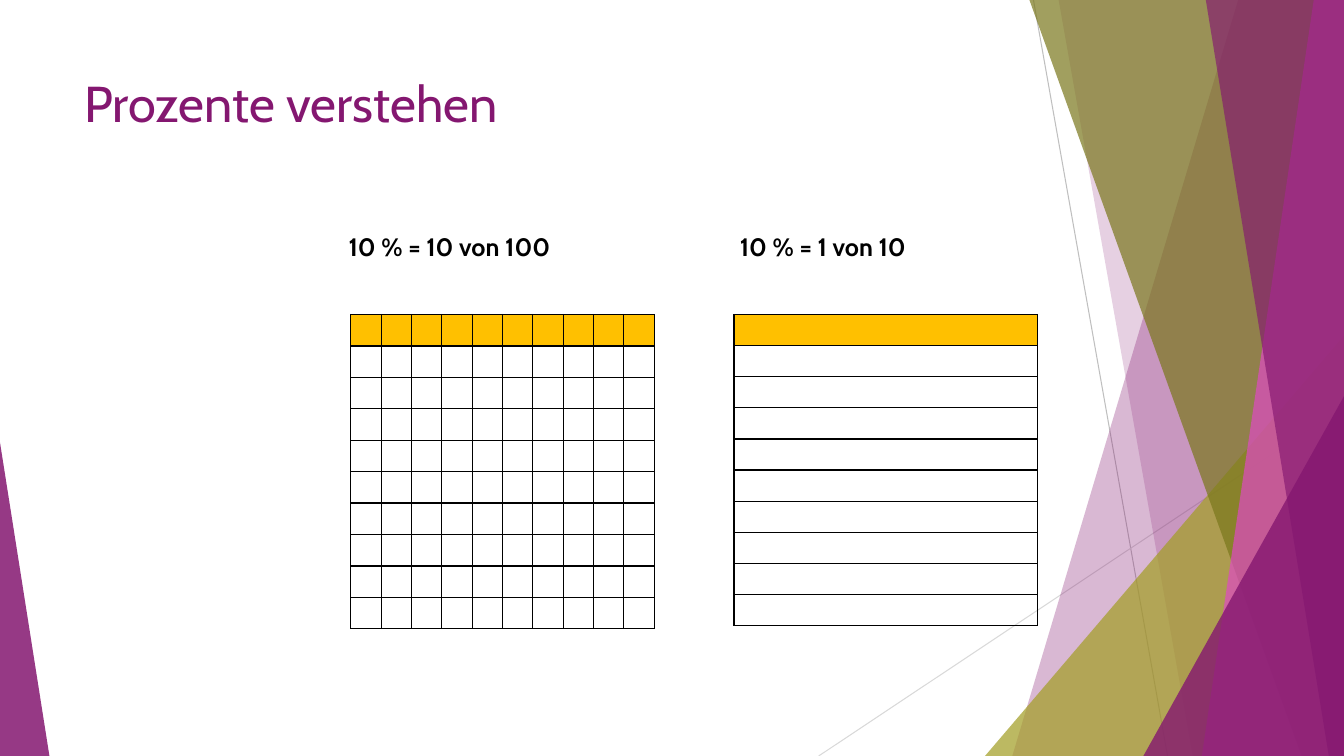
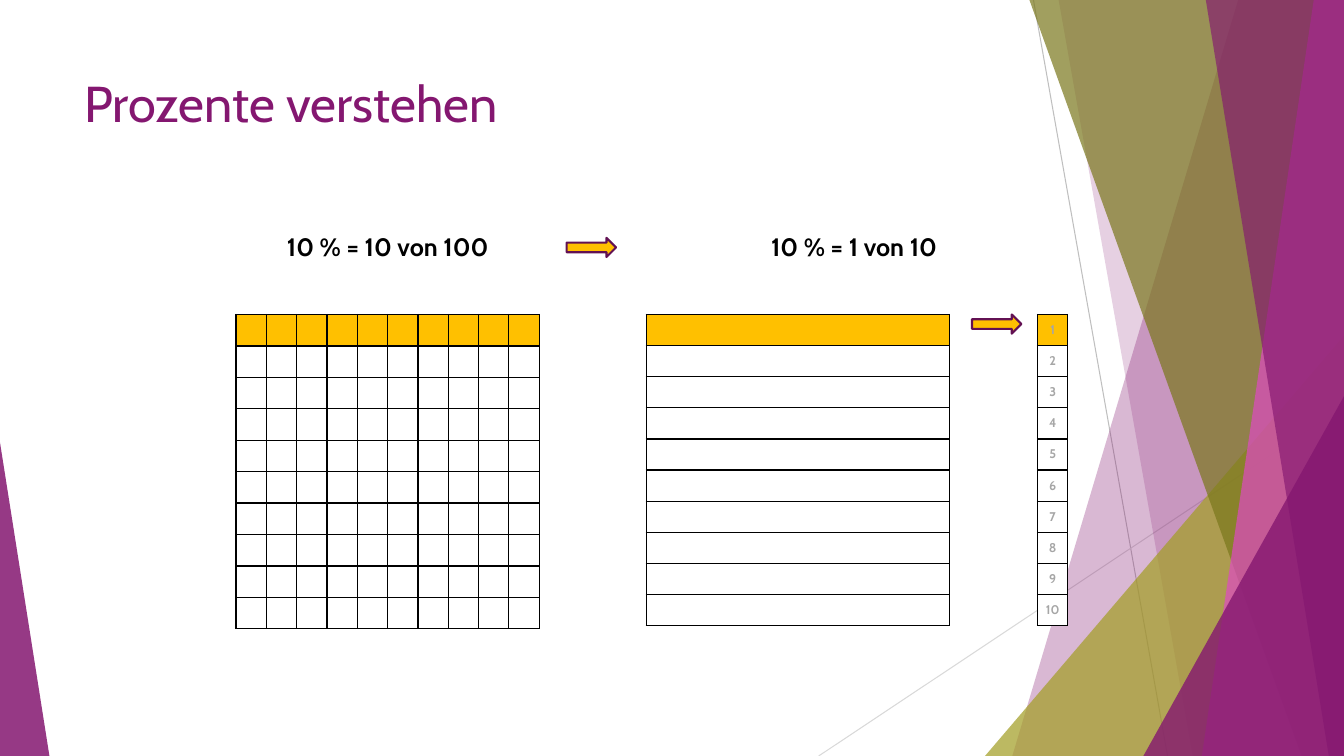
from lxml import etree
from pptx import Presentation
from pptx.dml.color import RGBColor
from pptx.enum.shapes import MSO_CONNECTOR, MSO_SHAPE
from pptx.enum.text import MSO_ANCHOR, PP_ALIGN
from pptx.oxml.ns import qn
from pptx.util import Inches, Pt

LEFT, CENTER = PP_ALIGN.LEFT, PP_ALIGN.CENTER
MIDDLE = MSO_ANCHOR.MIDDLE
STRAIGHT = MSO_CONNECTOR.STRAIGHT
TRIANGLE, RIGHT_ARROW = MSO_SHAPE.ISOSCELES_TRIANGLE, MSO_SHAPE.RIGHT_ARROW

FONT = "Cabin"
PURPLE, DARK_PURPLE, PINK = "841770", "621153", "DF4AC4"
OLIVE, DARK_OLIVE = "A39E26", "7A771C"
ORANGE, BLACK, WHITE, GREY = "FFC000", "000000", "FFFFFF", "A6A6A6"

SLIDE_W, SLIDE_H = 13.33, 7.5
TITLE = "Prozente verstehen"
TITLE_BOX = (0.74, 0.67, 9.4, 1.44)
TABLE_TOP, TABLE_W = 3.12, 3.01
HUNDRED_H, TENTHS_H = 3.12, 3.09
CAPTION_TOP, CAPTION_H = 2.25, 0.4
ARROW_SIZE = (0.49, 0.19)
PARTS = 10

# Thin lines: x1, y1, x2, y2, colour
RAYS = [
    (10.25, 0, 11.58, SLIDE_H, "BFBFBF"),
    (SLIDE_W, 4.03, 8.12, SLIDE_H, "D9D9D9"),
]
# Bands reach the right edge: left x at top, left x at bottom, colour, opacity.
# Triangles stand on the lower edge: x, y, width, apex, colour, opacity.
FACETS = [
    ("band", 12.28, 10.04, PURPLE, 30),
    ("band", 10.5, 11.83, PURPLE, 20),
    ("triangle", 9.77, 3.33, 3.56, 1, OLIVE, 72),
    ("band", 10.21, 12.91, DARK_OLIVE, 70),
    ("band", 13.03, 11.92, PINK, 70),
    ("band", 11.96, 13.18, PURPLE, 65),
    ("triangle", 11.34, 3.93, 1.99, 1, PURPLE, 80),
    ("triangle", 0, 4.39, 0.49, 0, PURPLE, 85),
]

# Captions: text, left, width, alignment
SLIDES = [
    {
        "captions": [("10 % = 10 von 100", 3.36, 3.21, LEFT),
                     ("10 % = 1 von 10", 7.24, 3.21, LEFT)],
        "hundred_left": 3.48,
        "tenths_left": 7.28,
    },
    {
        "captions": [("10 % = 10 von 100", 2.34, 3.01, CENTER),
                     ("10 % = 1 von 10", 6.41, 4.12, CENTER)],
        "hundred_left": 2.34,
        "tenths_left": 6.41,
        "numbers_left": 10.29,
        "arrows": [(9.64, 3.12), (5.62, 2.36)],
    },
]


def rgb(colour):
    return RGBColor.from_string(colour)


def inches(*lengths):
    return [Inches(length) for length in lengths]


def fill_plain(shape, colour, opacity=100):
    shape.shadow.inherit = False
    shape.line.fill.background()
    shape.fill.solid()
    shape.fill.fore_color.rgb = rgb(colour)
    if opacity < 100:
        colour_node = shape.fill._xPr.find(".//" + qn("a:srgbClr"))
        etree.SubElement(colour_node, qn("a:alpha"), val=str(opacity * 1000))


def style_paragraph(paragraph, size, colour, bold=False, align=LEFT):
    paragraph.alignment = align
    font = paragraph.font
    font.name, font.size, font.bold = FONT, Pt(size), bold
    font.color.rgb = rgb(colour)


def add_text(slide, text, box, size, colour, bold=False, align=LEFT):
    frame = slide.shapes.add_textbox(*inches(*box)).text_frame
    frame.word_wrap = True
    frame.text = text
    style_paragraph(frame.paragraphs[0], size, colour, bold, align)


def add_ray(slide, x1, y1, x2, y2, colour):
    ray = slide.shapes.add_connector(STRAIGHT, *inches(x1, y1, x2, y2))
    ray.line.color.rgb = rgb(colour)
    ray.line.width = Pt(0.75)
    etree.SubElement(ray._element.spPr, qn("a:effectLst"))


def add_band(slide, top_x, bottom_x, colour, opacity):
    builder = slide.shapes.build_freeform(*inches(top_x, 0))
    corners = [(SLIDE_W, 0), (SLIDE_W, SLIDE_H), (bottom_x, SLIDE_H)]
    builder.add_line_segments([inches(*corner) for corner in corners])
    fill_plain(builder.convert_to_shape(), colour, opacity)


def add_triangle(slide, x, y, width, apex, colour, opacity):
    triangle = slide.shapes.add_shape(TRIANGLE, *inches(x, y, width, SLIDE_H - y))
    triangle.adjustments[0] = apex
    fill_plain(triangle, colour, opacity)


def add_arrow(slide, x, y):
    arrow = slide.shapes.add_shape(RIGHT_ARROW, *inches(x, y, *ARROW_SIZE))
    fill_plain(arrow, ORANGE)
    arrow.line.color.rgb = rgb(DARK_PURPLE)
    arrow.line.width = Pt(1.5)


def set_borders(cell, sides):
    """Draw the borders named in sides (of L, R, T, B) and hide the others."""
    properties = cell._tc.get_or_add_tcPr()
    for side in "LRTB":
        border = etree.SubElement(properties, qn("a:ln" + side), w=str(Pt(1)))
        if side in sides:
            paint = etree.SubElement(border, qn("a:solidFill"))
            etree.SubElement(paint, qn("a:srgbClr"), val=BLACK)
        else:
            etree.SubElement(border, qn("a:noFill"))


def add_parts_table(slide, left, width, height, columns, split=True, numbered=False):
    """Add a table of ten rows, the first one orange; split shows the columns."""
    table = slide.shapes.add_table(
        PARTS, columns, *inches(left, TABLE_TOP, width, height)).table
    table.first_row = table.horz_banding = False
    for column in table.columns:
        column.width = Inches(width / columns)
    for r, row in enumerate(table.rows):
        row.height = Inches(height / PARTS)
        for c, cell in enumerate(row.cells):
            left_side = "L" if split or c == 0 else ""
            right_side = "R" if split or c == columns - 1 else ""
            set_borders(cell, "TB" + left_side + right_side)
            if r == 0 or numbered:
                cell.fill.solid()
                cell.fill.fore_color.rgb = rgb(WHITE if r else ORANGE)
            else:
                cell.fill.background()
            cell.margin_left = cell.margin_right = 0
            cell.margin_top = cell.margin_bottom = 0
            cell.vertical_anchor = MIDDLE
            if numbered:
                cell.text = str(r + 1)
            style_paragraph(cell.text_frame.paragraphs[0], 9, GREY, True, CENTER)


def add_base_slide(deck):
    """Add a blank slide with the shared backdrop and title."""
    slide = deck.slides.add_slide(deck.slide_layouts[6])
    for ray in RAYS:
        add_ray(slide, *ray)
    draw = {"band": add_band, "triangle": add_triangle}
    for kind, *facet in FACETS:
        draw[kind](slide, *facet)
    add_text(slide, TITLE, TITLE_BOX, 36, PURPLE)
    return slide


def main():
    deck = Presentation()
    deck.slide_width, deck.slide_height = inches(SLIDE_W, SLIDE_H)
    for content in SLIDES:
        slide = add_base_slide(deck)
        for text, left, width, align in content["captions"]:
            box = (left, CAPTION_TOP, width, CAPTION_H)
            add_text(slide, text, box, 18, BLACK, True, align)
        add_parts_table(slide, content["hundred_left"], TABLE_W, HUNDRED_H, PARTS)
        add_parts_table(slide, content["tenths_left"], TABLE_W, TENTHS_H, PARTS,
                        split=False)
        if "numbers_left" in content:
            add_parts_table(slide, content["numbers_left"], TABLE_W / PARTS,
                            TENTHS_H, 1, numbered=True)
        for arrow in content.get("arrows", []):
            add_arrow(slide, *arrow)
    deck.save("out.pptx")


if __name__ == "__main__":
    main()
